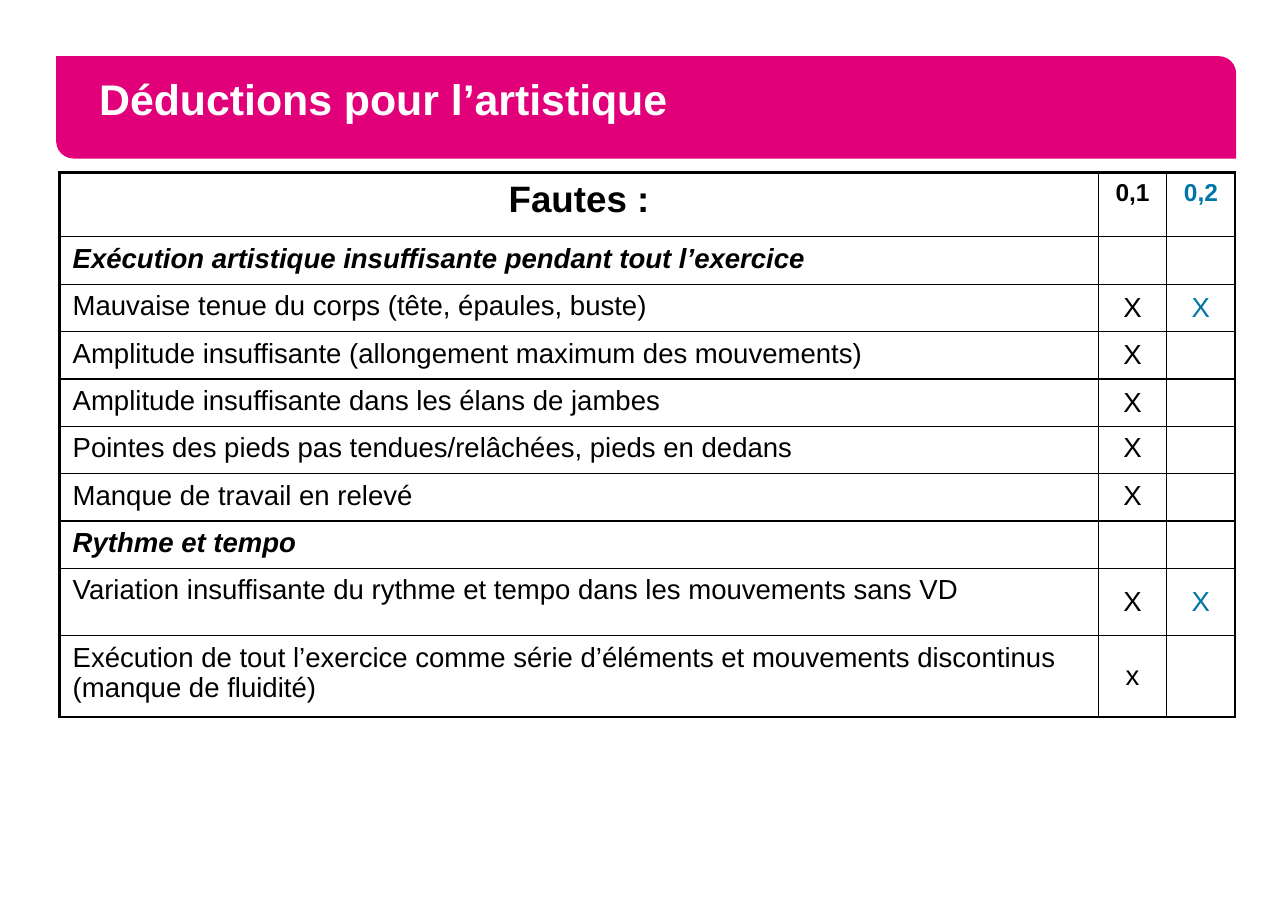
import pptx
import pptx.util
import pptx.oxml
import pptx.oxml.ns
import pptx.dml.color
import pptx.enum.shapes
import pptx.enum.text

Inches = pptx.util.Inches
Pt = pptx.util.Pt
Align = pptx.enum.text.PP_ALIGN
Anchor = pptx.enum.text.MSO_ANCHOR

PINK, BLUE, BLACK, WHITE = "E2007A", "0076A8", "000000", "FFFFFF"
FRAME = (0.51, 0.51, 10.71, 0.93)
WIDTHS = [9.43, 0.62, 0.62]
HEIGHTS = [0.58] + [0.43] * 7 + [0.61, 0.74]
ROWS = [
    ("Fautes :", "0,1", "0,2"),
    ("Exécution artistique insuffisante pendant tout l’exercice", "", ""),
    ("Mauvaise tenue du corps (tête, épaules, buste)", "X", "X"),
    ("Amplitude insuffisante (allongement maximum des mouvements)", "X", ""),
    ("Amplitude insuffisante dans les élans de jambes", "X", ""),
    ("Pointes des pieds pas tendues/relâchées, pieds en dedans", "X", ""),
    ("Manque de travail en relevé", "X", ""),
    ("Rythme et tempo", "", ""),
    ("Variation insuffisante du rythme et tempo dans les mouvements sans VD", "X", "X"),
    ("Exécution de tout l’exercice comme série d’éléments et mouvements discontinus (manque de fluidité)", "x", ""),
]
HEADS = (1, 7)
TOPS = (5, 6)


def color(code):
    return pptx.dml.color.RGBColor.from_string(code)


class Page:
    face = "Arial"

    def __init__(self, deck):
        self.slide = deck.slides.add_slide(deck.slide_layouts[5])
        self.shapes = self.slide.shapes

    def style(self, para, size, code=BLACK, bold=False, slant=False):
        font = para.font
        font.name, font.size = self.face, Pt(size)
        font.bold, font.italic = bold, slant
        font.color.rgb = color(code)

    def banner(self, box):
        kind = pptx.enum.shapes.MSO_SHAPE.ROUND_2_DIAG_RECTANGLE
        bar = self.shapes.add_shape(kind, *map(Inches, box))
        bar.adjustments[0], bar.adjustments[1] = 0, 0.17
        bar.shadow.inherit = False
        bar.fill.solid()
        bar.fill.fore_color.rgb = color(PINK)
        bar.line.fill.background()
        self.shapes._spTree.insert(2, bar._element)

    def title(self, text, box):
        head = self.shapes.title
        head.left, head.top, head.width, head.height = map(Inches, box)
        frame = head.text_frame
        frame.text = text
        frame.word_wrap = True
        frame.auto_size = pptx.enum.text.MSO_AUTO_SIZE.NONE
        frame.vertical_anchor = Anchor.MIDDLE
        frame.margin_left = frame.margin_right = Inches(0.39)
        frame.margin_top = frame.margin_bottom = Inches(0.05)
        para = frame.paragraphs[0]
        para.alignment = Align.LEFT
        para.line_spacing = Pt(22)
        self.style(para, 28, WHITE, bold=True)

    def edge(self, cell, side, width):
        line = pptx.oxml.parse_xml(
            f'<a:{side} {pptx.oxml.ns.nsdecls("a")} w="{Pt(width)}">'
            f'<a:solidFill><a:srgbClr val="{BLACK}"/></a:solidFill></a:{side}>')
        cell._tc.get_or_add_tcPr().append(line)

    def cell(self, cell, text, row, col):
        cell.margin_left = cell.margin_right = Inches(0.12)
        cell.margin_top = cell.margin_bottom = Inches(0.06)
        mid = col > 0 and row > 0 and row not in TOPS
        cell.vertical_anchor = Anchor.MIDDLE if mid else Anchor.TOP
        cell.text = text
        para = cell.text_frame.paragraphs[0]
        para.alignment = Align.CENTER if col or not row else Align.LEFT
        size = 18 if row else 16 if col else 24
        head = col == 0 and row in HEADS
        self.style(para, size, BLUE if col == 2 else BLACK, head or row == 0, head)
        self.edge(cell, "lnL", 1 if col else 2.25)
        self.edge(cell, "lnR", 1)
        self.edge(cell, "lnT", 1 if row else 2.25)
        self.edge(cell, "lnB", 1)
        cell.fill.background()

    def table(self, rows, left, top):
        size = (left, top, sum(WIDTHS), sum(HEIGHTS))
        grid = self.shapes.add_table(len(rows), len(WIDTHS), *map(Inches, size)).table
        grid.first_row = grid.horz_banding = False
        for col, width in zip(grid.columns, WIDTHS):
            col.width = Inches(width)
        for row, height in zip(grid.rows, HEIGHTS):
            row.height = Inches(height)
        for r, texts in enumerate(rows):
            for c, text in enumerate(texts):
                self.cell(grid.cell(r, c), text, r, c)


def main():
    deck = pptx.Presentation()
    deck.slide_width, deck.slide_height = Inches(11.69), Inches(8.27)
    page = Page(deck)
    page.banner(FRAME)
    page.title("Déductions pour l’artistique", FRAME)
    page.table(ROWS, 0.54, 1.57)
    deck.save("out.pptx")


if __name__ == "__main__":
    main()
